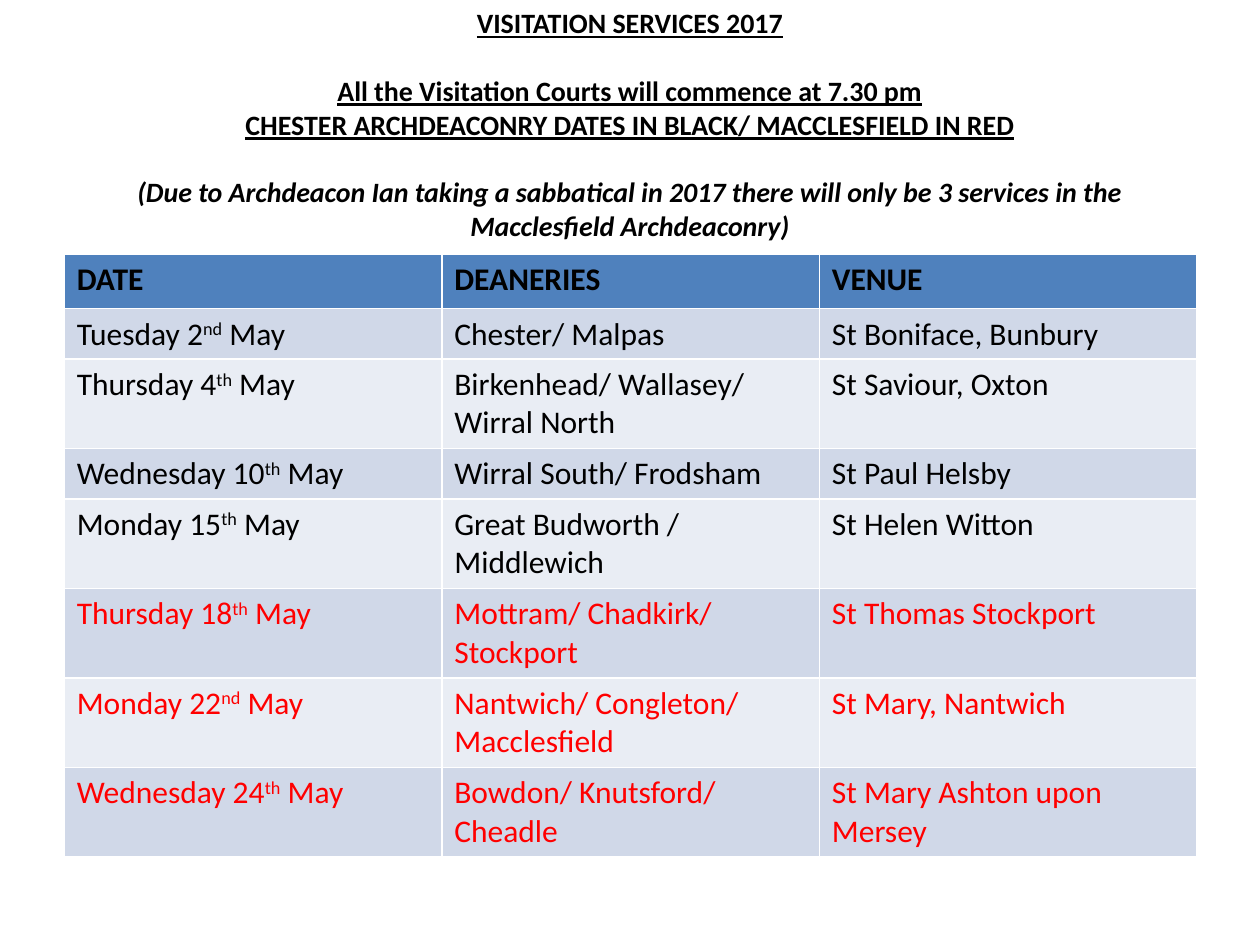
from pptx import Presentation
from pptx.dml.color import RGBColor
from pptx.enum.text import MSO_ANCHOR as Anchor, PP_ALIGN as Align
from pptx.util import Inches, Pt

BLACK = RGBColor(0, 0, 0)
RED = RGBColor(0xFF, 0, 0)
BLUE = RGBColor(0x4F, 0x81, 0xBD)
BANDS = (RGBColor(0xD0, 0xD8, 0xE8), RGBColor(0xE9, 0xED, 0xF4))

TITLE = [
    ("VISITATION SERVICES 2017", False, 0),
    ("All the Visitation Courts will commence at 7.30 pm", False, 19.5),
    ("CHESTER ARCHDEACONRY DATES IN BLACK/ MACCLESFIELD IN RED", False, 0),
    ("(Due to Archdeacon Ian taking a sabbatical in 2017 there will only "
     "be 3 services in the Macclesfield Archdeaconry)", True, 19.5),
]
HEADS = ("DATE", "DEANERIES", "VENUE")
VISITS = [
    ("Tuesday 2", "nd", "Chester/ Malpas", "St Boniface, Bunbury", BLACK, 0.4),
    ("Thursday 4", "th", "Birkenhead/ Wallasey/ Wirral North", "St Saviour, Oxton", BLACK, 0.71),
    ("Wednesday 10", "th", "Wirral South/ Frodsham", "St Paul Helsby", BLACK, 0.4),
    ("Monday 15", "th", "Great Budworth / Middlewich", "St Helen Witton", BLACK, 0.71),
    ("Thursday 18", "th", "Mottram/ Chadkirk/ Stockport", "St Thomas Stockport", RED, 0.71),
    ("Monday 22", "nd", "Nantwich/ Congleton/ Macclesfield", "St Mary, Nantwich", RED, 0.71),
    ("Wednesday 24", "th", "Bowdon/ Knutsford/ Cheadle", "St Mary Ashton upon Mersey", RED, 0.71),
]


def style(para, size, color, bold):
    """Set the font of a whole paragraph."""
    font = para.font
    font.name, font.size, font.bold = "Calibri", Pt(size), bold
    font.color.rgb = color


def add_title(slide):
    """Add the centred heading lines above the table."""
    box = slide.shapes.add_textbox(Inches(0.5), Inches(0.3), Inches(9), Inches(1.64))
    frame = box.text_frame
    frame.word_wrap = True
    frame.vertical_anchor = Anchor.MIDDLE
    frame.margin_bottom = Inches(0.32)
    for i, (text, italic, gap) in enumerate(TITLE):
        para = frame.add_paragraph() if i else frame.paragraphs[0]
        para.text = text
        para.alignment = Align.CENTER
        para.space_before = Pt(gap)
        style(para, 16, BLACK, True)
        para.font.italic = italic
        para.font.underline = not italic


def fill_cell(cell, parts, fill, color, bold=False):
    """Fill a cell with text parts, every second one raised."""
    cell.fill.solid()
    cell.fill.fore_color.rgb = fill
    para = cell.text_frame.paragraphs[0]
    style(para, 18, color, bold)
    for i, text in enumerate(parts):
        run = para.add_run()
        run.text = text
        if i % 2:
            run._r.get_or_add_rPr().set("baseline", "30000")


def add_dates(slide):
    """Add the table of visitation dates."""
    high = 0.43 + sum(visit[-1] for visit in VISITS)
    table = slide.shapes.add_table(
        len(VISITS) + 1, len(HEADS),
        Inches(0.51), Inches(2.02), Inches(8.99), Inches(high)).table
    table.rows[0].height = Inches(0.43)
    for col, head in enumerate(HEADS):
        fill_cell(table.cell(0, col), [head], BLUE, BLACK, True)
    for row, (day, mark, area, venue, color, tall) in enumerate(VISITS, 1):
        table.rows[row].height = Inches(tall)
        for col, parts in enumerate(([day, mark, " May"], [area], [venue])):
            fill_cell(table.cell(row, col), parts, BANDS[(row - 1) % 2], color)


def main():
    """Build the slide and save it."""
    deck = Presentation()
    deck.slide_width, deck.slide_height = Inches(10), Inches(7.5)
    slide = deck.slides.add_slide(deck.slide_layouts[6])
    add_title(slide)
    add_dates(slide)
    deck.save("out.pptx")


if __name__ == "__main__":
    main()
